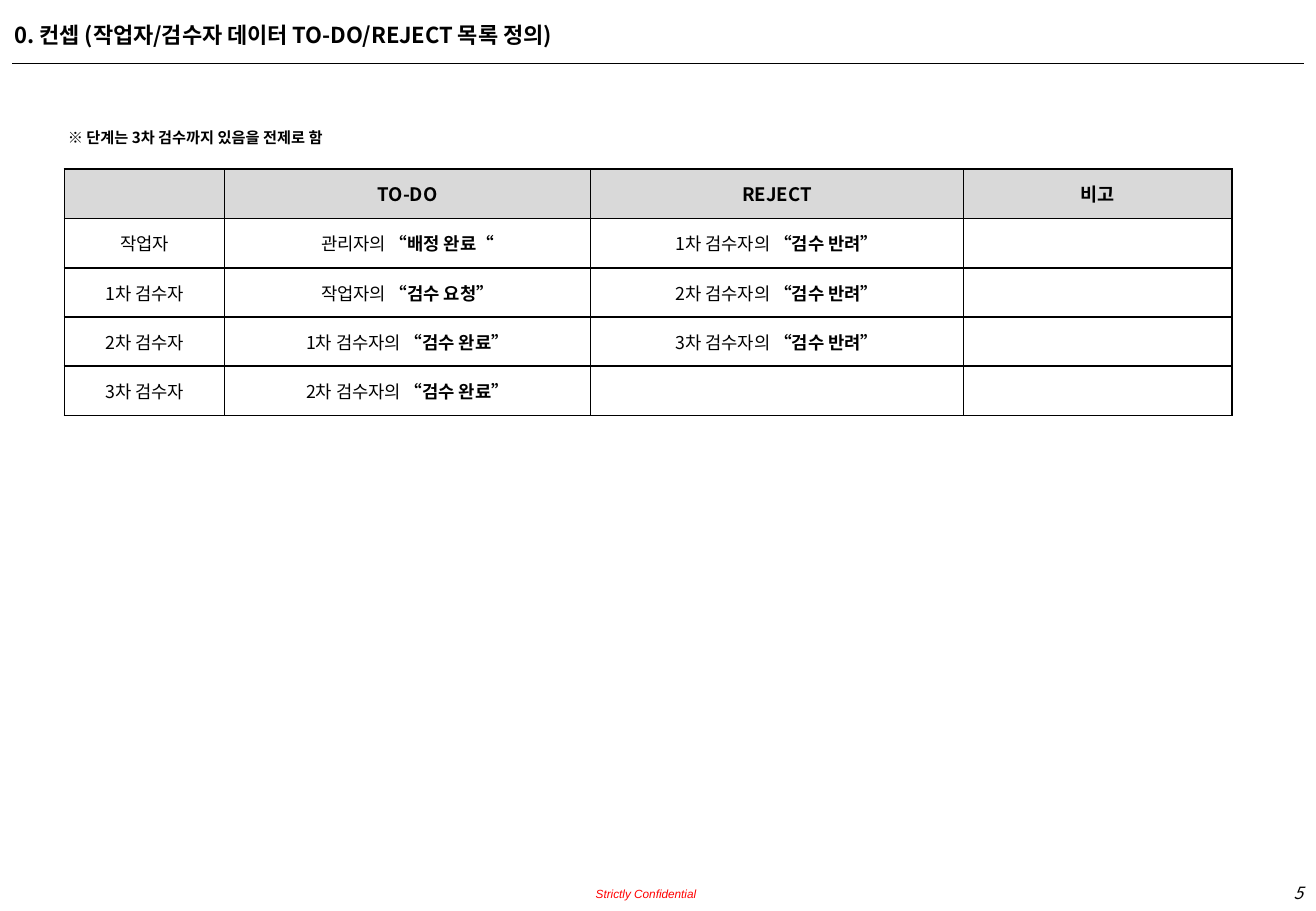
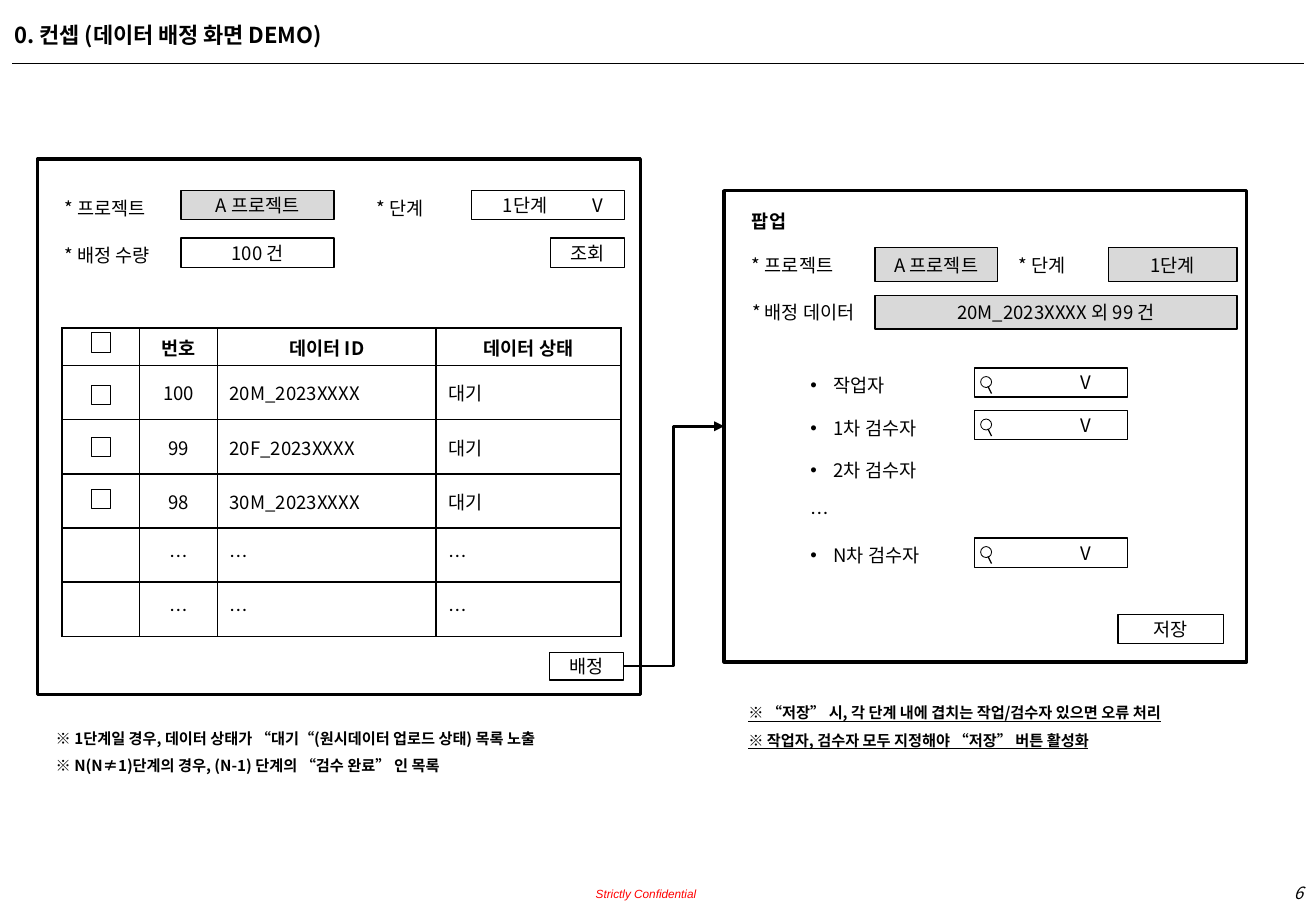
from dataclasses import dataclass, replace
from typing import Any, Sequence

from lxml import etree
from pptx import Presentation
from pptx import util as u
from pptx.dml.color import RGBColor
from pptx.enum import shapes, text
from pptx.oxml.ns import qn


@dataclass(frozen=True)
class Theme:
    font: str = "Noto Sans CJK KR"
    footer_font: str = "Arial"
    ink: str = "000000"
    alert: str = "FF0000"
    shade: str = "D9D9D9"
    title: float = 13
    body: float = 11
    cell: float = 10.5
    number: float = 10
    note: float = 9
    footer: float = 7
    hairline: float = 0.5
    thin: float = 0.75
    border: float = 1
    arrow: float = 1.5
    frame: float = 2


THEME = Theme()
LEFT, CENTER, RIGHT = text.PP_ALIGN.LEFT, text.PP_ALIGN.CENTER, text.PP_ALIGN.RIGHT
TOP, MIDDLE, BOTTOM = (text.MSO_ANCHOR.TOP, text.MSO_ANCHOR.MIDDLE,
                       text.MSO_ANCHOR.BOTTOM)
WIDTH, HEIGHT = 10.83, 7.5
FIRST_NUMBER = 5


@dataclass(frozen=True)
class Box:
    left: float
    top: float
    width: float
    height: float

    def inches(self) -> list[int]:
        return [u.Inches(v) for v in (self.left, self.top, self.width, self.height)]


@dataclass(frozen=True)
class Grid:
    left: float
    top: float
    column: float
    row: float

    def box(self, column: float, row: float, width: float, height: float,
            shift: float = 0) -> Box:
        """Box at a grid position, moved right by shift."""
        return Box(self.left + column * self.column + shift,
                   self.top + row * self.row, width, height)


@dataclass(frozen=True)
class Style:
    size: float = THEME.body
    bold: bool = False
    italic: bool = False
    underline: bool = False
    color: str = THEME.ink
    font: str = THEME.font
    align: Any = LEFT
    anchor: Any = TOP
    spacing: float = 1
    wrap: bool = True
    inset: bool = True
    bullet: bool = False
    tabs: tuple[float, ...] = ()


@dataclass(frozen=True)
class Entry:
    """A form label or a field on a form grid."""
    words: str
    column: int
    row: int
    width: float
    shift: float = 0
    shaded: bool = False
    style: Style = Style()


BODY = Style()
CENTERED = Style(align=CENTER, anchor=MIDDLE)
HEADING = replace(CENTERED, bold=True)
ROLE = replace(CENTERED, size=THEME.cell)
NOTE = Style(size=THEME.note, bold=True, spacing=1.5, wrap=False)

ROLES = [
    ["", "TO-DO", "REJECT", "비고"],
    ["작업자", "관리자의 |“배정 완료“", "1차 검수자의 |“검수 반려”", ""],
    ["1차 검수자", "작업자의 |“검수 요청”", "2차 검수자의 |“검수 반려”", ""],
    ["2차 검수자", "1차 검수자의 |“검수 완료”", "3차 검수자의 |“검수 반려”", ""],
    ["3차 검수자", "2차 검수자의 |“검수 완료”", "", ""],
]
DATA = [
    ["", "번호", "데이터 ID", "데이터 상태"],
    ["", "100", "20M_2023XXXX", "대기"],
    ["", "99", "20F_2023XXXX", "대기"],
    ["", "98", "30M_2023XXXX", "대기"],
    *[["", "…", "…", "…"]] * 2,
]


def apply(target: Any, **values: Any) -> None:
    for name, value in values.items():
        setattr(target, name, value)


def child(parent: Any, tag: str, **attributes: Any) -> Any:
    return etree.SubElement(parent, qn(tag), {k: str(v) for k, v in attributes.items()})


def format_run(run: Any, style: Style, bold: bool) -> None:
    apply(run.font, size=u.Pt(style.size), bold=bold, italic=style.italic,
          underline=style.underline, name=style.font)
    run.font.color.rgb = RGBColor.from_string(style.color)
    child(run.font._element, "a:ea", typeface=style.font)


def write(frame: Any, lines: Sequence[str], style: Style) -> None:
    """Fill a text frame; the part of a line after "|" is bold."""
    for index, line in enumerate(lines):
        paragraph = frame.add_paragraph() if index else frame.paragraphs[0]
        apply(paragraph, alignment=style.align, line_spacing=style.spacing)
        properties = paragraph._p.get_or_add_pPr()
        if style.bullet:
            properties.set("marL", str(u.Inches(0.19)))
            properties.set("indent", str(-u.Inches(0.19)))
            child(properties, "a:buFont", typeface="Arial")
            child(properties, "a:buChar", char="•")
        if style.tabs:
            stops = child(properties, "a:tabLst")
            for stop in style.tabs:
                child(stops, "a:tab", pos=u.Inches(stop), algn="l")
        for part, words in enumerate(line.split("|") if line else []):
            run = paragraph.add_run()
            run.text = words
            format_run(run, style, style.bold or part > 0)
        if not line:
            child(paragraph._p, "a:endParaRPr", sz=int(style.size * 100))


def format_frame(frame: Any, style: Style) -> None:
    apply(frame, word_wrap=style.wrap, vertical_anchor=style.anchor)
    if not style.inset:
        apply(frame, margin_left=0, margin_right=0, margin_top=0, margin_bottom=0)


def add_text(slide: Any, box: Box, lines: Sequence[str], style: Style = BODY) -> Any:
    shape = slide.shapes.add_textbox(*box.inches())
    format_frame(shape.text_frame, style)
    if style.inset:
        shape.text_frame.auto_size = text.MSO_AUTO_SIZE.SHAPE_TO_FIT_TEXT
    write(shape.text_frame, lines, style)
    return shape


def set_line(shape: Any, width: float) -> None:
    shape.line.color.rgb = RGBColor.from_string(THEME.ink)
    shape.line.width = u.Pt(width)


def set_fill(target: Any, color: str | None) -> None:
    if color:
        target.fill.solid()
        target.fill.fore_color.rgb = RGBColor.from_string(color)
    else:
        target.fill.background()


def add_outline(owner: Any, box: Box, width: float = THEME.thin, words: str = "",
                shaded: bool = False, style: Style = CENTERED,
                kind: Any = shapes.MSO_SHAPE.RECTANGLE) -> Any:
    shape = owner.shapes.add_shape(kind, *box.inches())
    shape.shadow.inherit = False
    set_line(shape, width)
    set_fill(shape, THEME.shade if shaded else None)
    if words:
        format_frame(shape.text_frame, style)
        write(shape.text_frame, [words], style)
    return shape


def add_line(owner: Any, start: tuple[float, float], end: tuple[float, float],
             width: float = THEME.thin,
             kind: Any = shapes.MSO_CONNECTOR.STRAIGHT) -> Any:
    line = owner.shapes.add_connector(kind, *map(u.Inches, (*start, *end)))
    set_line(line, width)
    child(line._element.spPr, "a:effectLst")
    return line


def add_table(slide: Any, box: Box, rows: list[list[str]], widths: Sequence[float],
              header: float, styles: Sequence[Style], shaded: bool) -> None:
    """Draw a bordered table with one text style per column below its header."""
    table = slide.shapes.add_table(len(rows), len(widths), *box.inches()).table
    apply(table, first_row=False, horz_banding=False)
    for column, width in zip(table.columns, widths):
        column.width = u.Inches(width)
    body = (box.height - header) / (len(rows) - 1)
    for r, words in enumerate(rows):
        table.rows[r].height = u.Inches(body if r else header)
        for c, content in enumerate(words):
            cell = table.cell(r, c)
            cell.vertical_anchor = MIDDLE
            properties = cell._tc.get_or_add_tcPr()
            for side in ("a:lnL", "a:lnR", "a:lnT", "a:lnB"):
                edge = child(properties, side, w=u.Pt(THEME.border))
                child(child(edge, "a:solidFill"), "a:srgbClr", val=THEME.ink)
            set_fill(cell, THEME.shade if shaded and r == 0 else None)
            write(cell.text_frame, [content], styles[c] if r else HEADING)


def add_page_number(slide: Any, number: int) -> None:
    shape = add_text(slide, Box(WIDTH - 1.68, 7.22, 1.67, 0.27), [str(number)],
                     Style(size=THEME.number, italic=True, align=RIGHT))
    run = shape.text_frame.paragraphs[0].runs[0]._r
    field = etree.Element(qn("a:fld"), type="slidenum",
                          id="{B6F15528-21DE-4FAA-801E-634DDDAF4B2B}")
    run.addprevious(field)
    field.extend(list(run))
    run.getparent().remove(run)


def add_page(presentation: Any, title: str) -> Any:
    slide = presentation.slides.add_slide(presentation.slide_layouts[5])
    heading = slide.shapes.title
    apply(heading, **dict(zip(("left", "top", "width", "height"),
                              Box(0.02, 0.13, 10.52, 0.32).inches())))
    style = Style(size=THEME.title, bold=True)
    format_frame(heading.text_frame, style)
    write(heading.text_frame, [title], style)
    add_line(slide, (0.1, 0.52), (WIDTH - 0.1, 0.52))
    add_text(slide, Box(4.2, 7.18, 1.53, 0.24), ["Strictly Confidential"],
             Style(size=THEME.footer, font=THEME.footer_font, color=THEME.alert,
                   italic=True, align=RIGHT, anchor=BOTTOM, inset=False))
    add_page_number(slide, FIRST_NUMBER + len(presentation.slides) - 1)
    return slide


def add_form(slide: Any, grid: Grid, labels: Sequence[Entry],
             fields: Sequence[Entry], height: float) -> None:
    for label in labels:
        add_text(slide, grid.box(label.column, label.row, label.width, 0.29, label.shift),
                 [label.words], label.style)
    for field in fields:
        add_outline(slide, grid.box(field.column, field.row, field.width, height, field.shift),
                    words=field.words, shaded=field.shaded, style=field.style)


def add_search_field(slide: Any, box: Box) -> None:
    add_outline(slide, box, words="\tV", style=Style(anchor=MIDDLE, tabs=(0.77,)))
    magnifier = slide.shapes.add_group_shape()
    add_outline(magnifier, Box(box.left + 0.05, box.top + 0.07, 0.09, 0.09),
                THEME.hairline, kind=shapes.MSO_SHAPE.OVAL)
    add_line(magnifier, (box.left + 0.11, box.top + 0.15),
             (box.left + 0.14, box.top + 0.21))


def build_role_slide(presentation: Any) -> None:
    slide = add_page(presentation, "0. 컨셉 (작업자/검수자 데이터 TO-DO/REJECT 목록 정의)")
    add_table(slide, Box(0.53, 1.39, 9.61, 2.03), ROLES, (1.32, 3.01, 3.07, 2.21),
              0.41, [ROLE] * 4, shaded=True)
    add_text(slide, Box(0.46, 0.93, 2.61, 0.3),
             ["※ 단계는 3차 검수까지 있음을 전제로 함"], NOTE)


def add_assignment_screen(slide: Any) -> Any:
    """Draw the main screen and return its assign button."""
    add_outline(slide, Box(0.31, 1.31, 4.96, 4.41), THEME.frame)
    middle = replace(BODY, align=CENTER)
    add_form(slide, Grid(0.43, 1.57, 2.39, 0.39),
             [Entry("* 프로젝트", 0, 0, 0.94), Entry("* 배정 수량", 0, 1, 1.06),
              Entry("* 단계", 1, 0, 0.94, style=middle)],
             [Entry("A 프로젝트", 0, 0, 1.26, 1.06, True, CENTERED),
              Entry("100 건", 0, 1, 1.26, 1.06, style=CENTERED),
              Entry("\t1단계\tV", 1, 0, 1.26, 1.06,
                    style=Style(anchor=MIDDLE, tabs=(0.16, 0.9))),
              Entry("조회", 1, 1, 0.61, 1.71, style=CENTERED)], 0.24)
    left = replace(BODY, anchor=MIDDLE)
    add_table(slide, Box(0.51, 2.7, 4.61, 2.54), DATA, (0.64, 0.64, 1.8, 1.52), 0.31,
              [CENTERED, CENTERED, left, left], shaded=False)
    checkboxes = Grid(0.75, 2.74, 0, 0.43)
    for row in range(4):
        add_outline(slide, checkboxes.box(0, row, 0.16, 0.16), THEME.hairline)
    return add_outline(slide, Box(4.52, 5.37, 0.61, 0.23), words="배정")


def add_popup(slide: Any) -> Any:
    """Draw the popup and return its frame."""
    frame = add_outline(slide, Box(5.96, 1.57, 4.3, 3.88), THEME.frame)
    add_text(slide, Box(6.09, 1.68, 0.94, 0.29), ["팝업"], replace(BODY, bold=True))
    add_form(slide, Grid(6.09, 2.04, 2.05, 0.39),
             [Entry("* 프로젝트", 0, 0, 0.94), Entry("* 배정 데이터", 0, 1, 1.21),
              Entry("* 단계", 1, 0, 0.87, style=replace(BODY, align=CENTER))],
             [Entry("A 프로젝트", 0, 0, 1.01, 1.11, True, CENTERED),
              Entry("1단계", 1, 0, 1.06, 0.98, True, CENTERED),
              Entry("20M_2023XXXX 외 99 건", 0, 1, 2.98, 1.11, True, CENTERED)], 0.28)
    people = Grid(6.57, 3.03, 1.45, 0.35)
    for row, name in enumerate(("작업자", "1차 검수자", "2차 검수자", "…", "N차 검수자")):
        add_text(slide, people.box(0, row, 1.21, 0.29), [name],
                 replace(BODY, bullet=name != "…"))
        if row in (0, 1, 4):
            add_search_field(slide, people.box(1, row, 1.26, 0.24))
    add_outline(slide, Box(9.2, 5.06, 0.87, 0.24), words="저장")
    return frame


def build_demo_slide(presentation: Any) -> None:
    slide = add_page(presentation, "0. 컨셉 (데이터 배정 화면 DEMO)")
    button, popup = add_assignment_screen(slide), add_popup(slide)
    arrow = add_line(slide, (5.13, 5.48), (5.96, 3.51), THEME.arrow,
                     shapes.MSO_CONNECTOR.ELBOW)
    arrow.begin_connect(button, 3)
    arrow.end_connect(popup, 1)
    child(arrow.line._get_or_add_ln(), "a:tailEnd", type="triangle")
    add_text(slide, Box(6.06, 5.67, 3.85, 0.53),
             ["※ “저장” 시, 각 단계 내에 겹치는 작업/검수자 있으면 오류 처리",
              "※ 작업자, 검수자 모두 지정해야 “저장” 버튼 활성화"],
             replace(NOTE, underline=True))
    add_text(slide, Box(0.36, 5.88, 4.42, 0.53),
             ["※ 1단계일 경우, 데이터 상태가 “대기“(원시데이터 업로드 상태) 목록 노출",
              "※ N(N≠1)단계의 경우, (N-1) 단계의 “검수 완료” 인 목록"], NOTE)


def main() -> None:
    presentation = Presentation()
    apply(presentation, slide_width=u.Inches(WIDTH), slide_height=u.Inches(HEIGHT))
    presentation.element.set("firstSlideNum", str(FIRST_NUMBER))
    build_role_slide(presentation)
    build_demo_slide(presentation)
    presentation.save("out.pptx")


if __name__ == "__main__":
    main()
